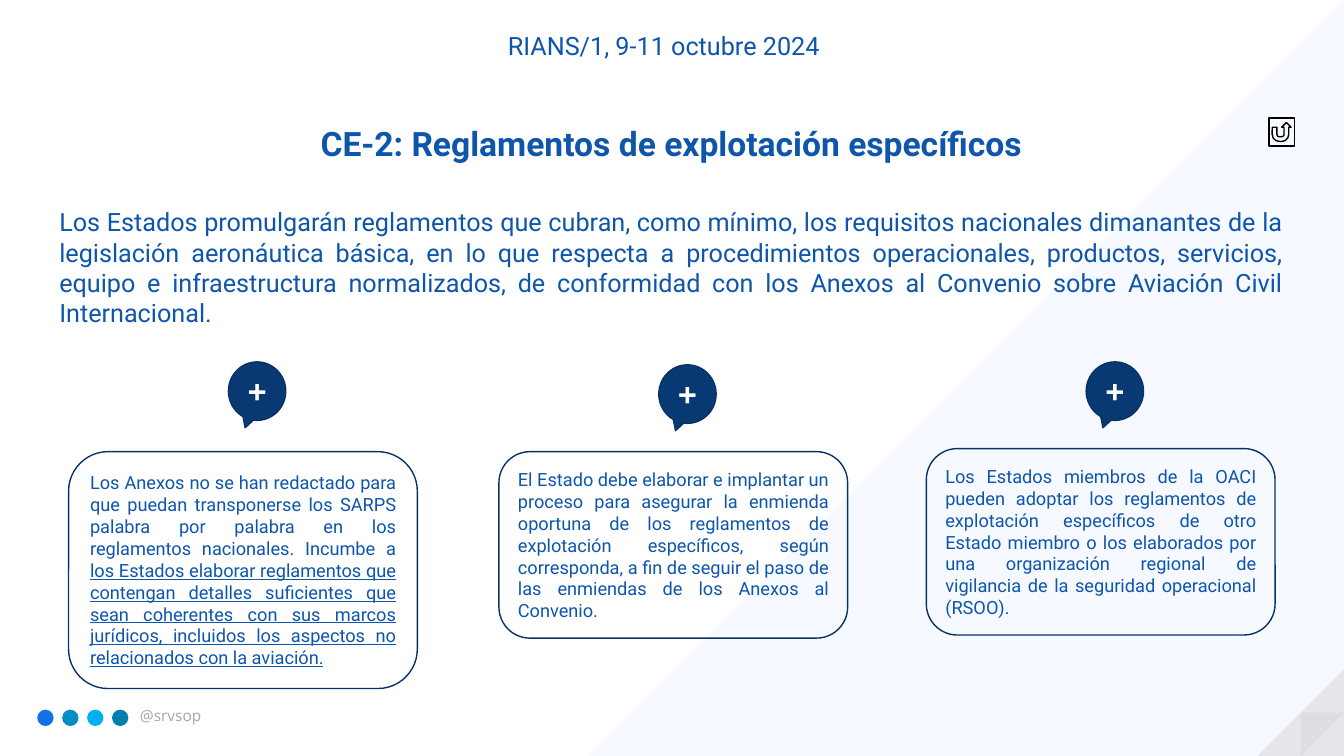
"""Build the CE-2 slide on specific operating regulations."""
from dataclasses import dataclass

from lxml import etree
from pptx import Presentation
from pptx import util as u
from pptx.dml import color
from pptx.enum import shapes, text
from pptx.oxml import ns

SHAPE = shapes.MSO_SHAPE
ALIGN = text.PP_ALIGN


@dataclass(frozen=True)
class Theme:
    """Colours, fonts and type sizes of the deck."""
    blue: str = "0E55AC"
    navy: str = "093973"
    outline: str = "083265"
    black: str = "000000"
    white: str = "FFFFFF"
    grey: str = "A6A6A6"
    fold: str = "BFBFBF"
    pale: str = "F6F9FF"
    networks: tuple = ("1372E6", "008DC3", "00B0F0", "007EAE")
    main_font: str = "Roboto"
    other_font: str = "Open Sans"
    title: int = 24
    body: int = 18
    card: int = 13
    handle: int = 11


class Page:
    """Draw styled elements on one slide, with lengths in points."""

    def __init__(self, slide, theme):
        self.shapes = slide.shapes
        self.theme = theme

    def set_text(self, box, spans, align, **format_values):
        """Fill a shape with one paragraph made of (words, underlined) spans."""
        defaults = {"name": self.theme.main_font, "size": self.theme.body,
                    "color": self.theme.blue, "bold": False}
        style = {**defaults, **format_values}
        tint = style.pop("color")
        style["size"] = u.Pt(style["size"])
        box.text_frame.word_wrap = True
        para = box.text_frame.paragraphs[0]
        para.alignment = align
        for words, underlined in spans:
            span = para.add_run()
            span.text = words
            for key, value in {**style, "underline": underlined}.items():
                setattr(span.font, key, value)
            span.font.color.rgb = color.RGBColor.from_string(tint)

    def label(self, bounds, words, align=ALIGN.CENTER, **format_values):
        """Add a text box that grows with its text."""
        box = self.shapes.add_textbox(*map(u.Pt, bounds))
        box.text_frame.auto_size = text.MSO_AUTO_SIZE.SHAPE_TO_FIT_TEXT
        self.set_text(box, [(words, False)], align, **format_values)

    def figure(self, kind, bounds, fill=None, line=None):
        """Add a flat preset shape with an optional fill and outline."""
        shape = self.shapes.add_shape(kind, *map(u.Pt, bounds))
        shape.shadow.inherit = False
        for paint, tint in ((shape.fill, fill), (shape.line.fill, line)):
            if tint:
                paint.solid()
                paint.fore_color.rgb = color.RGBColor.from_string(tint)
            else:
                paint.background()
        if line:
            shape.line.width = u.Pt(1)
        return shape

    def triangle(self, left, top, side, fill, rotation, opacity=100):
        """Add a square-cornered triangle turned to a corner."""
        shape = self.figure(SHAPE.RIGHT_TRIANGLE, (left, top, side, side), fill)
        shape.rotation = rotation
        if opacity < 100:
            tint = shape._element.spPr.find(".//" + ns.qn("a:srgbClr"))
            etree.SubElement(tint, ns.qn("a:alpha"), val=str(opacity * 1000))

    def pin(self, left, top):
        """Add a round callout with a plus sign."""
        shape = self.figure(SHAPE.OVAL_CALLOUT, (left, top, 41, 41.8),
                            self.theme.navy, self.theme.outline)
        shape.text_frame.vertical_anchor = text.MSO_ANCHOR.MIDDLE
        self.set_text(shape, [("+", False)], ALIGN.CENTER, bold=True,
                      name=self.theme.other_font, size=self.theme.title,
                      color=self.theme.white)

    def card(self, left, top, height, spans):
        """Add a rounded outline with justified text."""
        shape = self.figure(SHAPE.ROUNDED_RECTANGLE, (left, top, 249.1, height),
                            line=self.theme.outline)
        shape.text_frame.vertical_anchor = text.MSO_ANCHOR.MIDDLE
        self.set_text(shape, spans, ALIGN.JUSTIFY, size=self.theme.card)


INTRO = (
    "Los Estados promulgarán reglamentos que cubran, como mínimo, los requisitos "
    "nacionales dimanantes de la legislación aeronáutica básica, en lo que respecta a "
    "procedimientos operacionales, productos, servicios, equipo e infraestructura "
    "normalizados, de conformidad con los Anexos al Convenio sobre Aviación Civil "
    "Internacional.")

CARDS = [
    (49, 322.6, 169.2, 258.5, [
        ("Los Anexos no se han redactado para que puedan transponerse los SARPS palabra "
         "por palabra en los reglamentos nacionales. Incumbe a ", False),
        ("los Estados elaborar reglamentos que contengan detalles suficientes que sean "
         "coherentes con sus marcos jurídicos, incluidos los aspectos no relacionados "
         "con la aviación.", True)]),
    (356.4, 322.6, 133.2, 260.6, [
        ("El Estado debe elaborar e implantar un proceso para asegurar la enmienda "
         "oportuna de los reglamentos de explotación específicos, según corresponda, a "
         "fin de seguir el paso de las enmiendas de los Anexos al Convenio.", False)]),
    (661.7, 320.4, 133.2, 258.5, [
        ("Los Estados miembros de la OACI pueden adoptar los reglamentos de explotación "
         "específicos de otro Estado miembro o los elaborados por una organización "
         "regional de vigilancia de la seguridad operacional (RSOO).", False)]),
]


def main():
    """Build and save the deck."""
    theme = Theme()
    deck = Presentation()
    deck.slide_width, deck.slide_height = u.Pt(960), u.Pt(540)
    page = Page(deck.slides.add_slide(deck.slide_layouts[6]), theme)

    page.triangle(420, 0, 540, theme.pale, 270)
    page.triangle(898, 478, 62, theme.grey, 270, opacity=22)
    page.triangle(929, 509, 31, theme.fold, 90, opacity=20)
    for index, tint in enumerate(theme.networks):
        page.figure(SHAPE.OVAL, (26.6 + 17.8 * index, 506.9, 11.7, 11.7), tint)
    page.label((92.9, 501.1, 107.3, 20.9), "@srvsop", ALIGN.LEFT,
               name=theme.other_font, size=theme.handle, color=theme.grey)

    page.label((258.5, 18, 431.3, 28.8), "RIANS/1, 9-11 octubre 2024")
    page.label((72.7, 84.2, 813.6, 36), "CE-2: Reglamentos de explotación específicos",
               size=theme.title, bold=True)
    page.label((35.3, 144, 888.5, 94.3), INTRO, ALIGN.JUSTIFY)

    for left, top, height, pin_top, spans in CARDS:
        page.pin(left + 114.2, pin_top)
        page.card(left, top, height, spans)
    page.figure(SHAPE.ACTION_BUTTON_RETURN, (906.5, 84.2, 18, 20.2), line=theme.black)
    deck.save("out.pptx")


if __name__ == "__main__":
    main()
